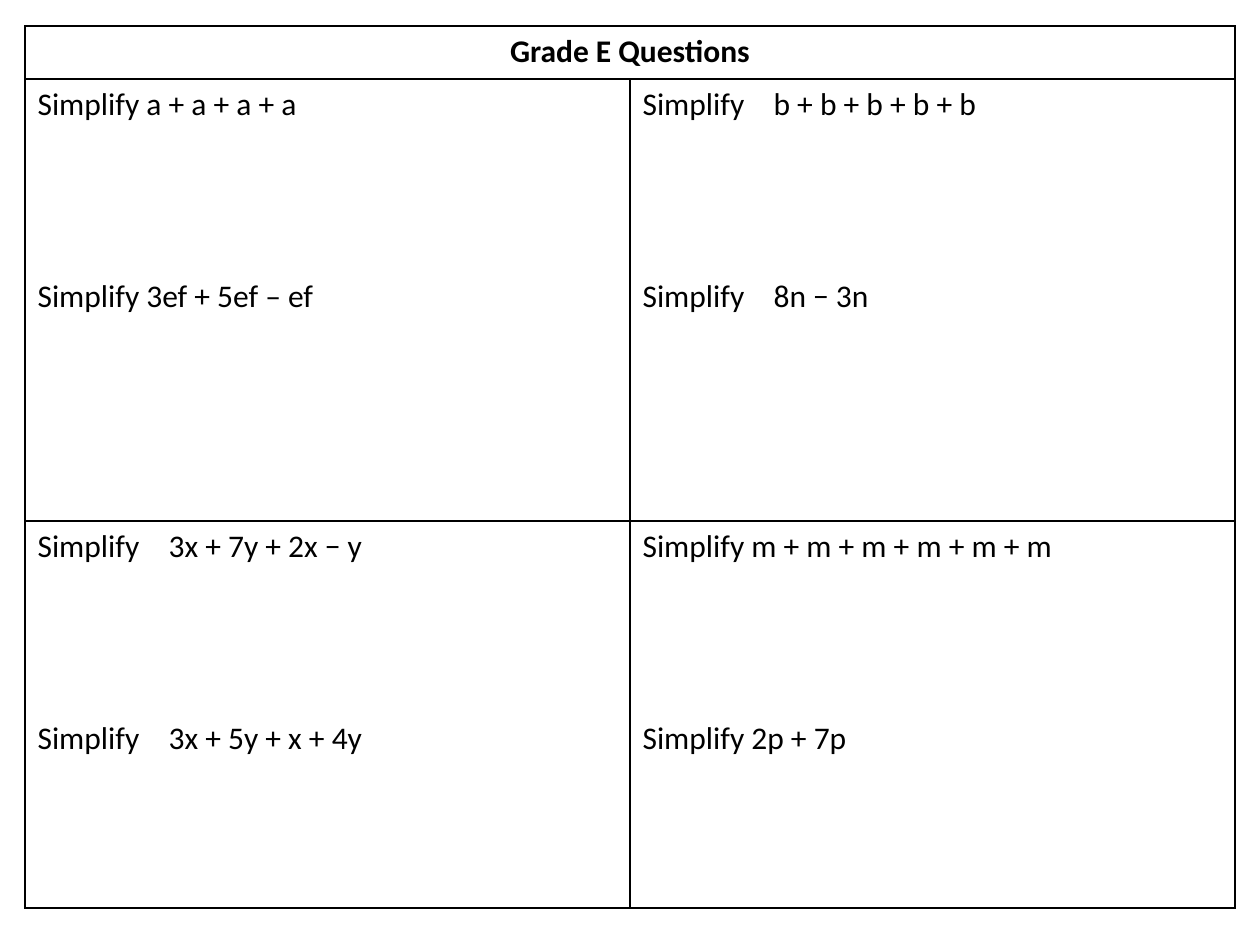
from lxml.etree import SubElement
from pptx import Presentation
from pptx.dml.color import RGBColor
from pptx.enum.text import PP_ALIGN as Align
from pptx.oxml.ns import qn
from pptx.util import Pt

PX = 914400 / 126
BLACK = RGBColor(0, 0, 0)
ROW_HEIGHTS = [53, 442, 387]
COLUMN_WIDTH = 605
TAB_STOP = 131
QUESTION_GAP = Pt(88)

TITLE = "Grade E Questions"
QUESTIONS = [
    [["Simplify a + a + a + a", "Simplify 3ef + 5ef – ef"],
     ["Simplify\tb + b + b + b + b", "Simplify\t8n − 3n"]],
    [["Simplify\t3x + 7y + 2x − y", "Simplify\t3x + 5y + x + 4y"],
     ["Simplify m + m + m + m + m + m", "Simplify 2p + 7p"]],
]


def px(length):
    return int(length * PX)


def style_font(paragraph, bold):
    font = paragraph.font
    font.name = "Calibri"
    font.size = Pt(18)
    font.bold = bold
    font.color.rgb = BLACK


presentation = Presentation()
presentation.slide_width = px(1260)
presentation.slide_height = px(945)
slide = presentation.slides.add_slide(presentation.slide_layouts[6])

# Table grid
table = slide.shapes.add_table(
    3, 2, px(25), px(26), px(2 * COLUMN_WIDTH), px(sum(ROW_HEIGHTS))).table
table.first_row = False
table.horz_banding = False
for column in table.columns:
    column.width = px(COLUMN_WIDTH)
for row, height in zip(table.rows, ROW_HEIGHTS):
    row.height = px(height)

# Black borders and no fill on every cell
for cell in table.iter_cells():
    properties = cell._tc.get_or_add_tcPr()
    for side in ("lnL", "lnR", "lnT", "lnB"):
        line = SubElement(properties, qn(f"a:{side}"), w=str(Pt(1)))
        line_fill = SubElement(line, qn("a:solidFill"))
        SubElement(line_fill, qn("a:srgbClr"), val=str(BLACK))
    cell.fill.background()

# Heading across both columns
heading = table.cell(0, 0)
heading.merge(table.cell(0, 1))
paragraph = heading.text_frame.paragraphs[0]
paragraph.text = TITLE
paragraph.alignment = Align.CENTER
style_font(paragraph, True)

# Two questions in each cell, with working space between them
for row_index, question_row in enumerate(QUESTIONS, start=1):
    for column_index, questions in enumerate(question_row):
        text_frame = table.cell(row_index, column_index).text_frame
        text_frame.text = "\n".join(questions)
        for index, paragraph in enumerate(text_frame.paragraphs):
            paragraph.space_before = QUESTION_GAP * index
            if "\t" in questions[index]:
                tabs = SubElement(paragraph._p.get_or_add_pPr(), qn("a:tabLst"))
                SubElement(tabs, qn("a:tab"), pos=str(px(TAB_STOP)), algn="l")
            style_font(paragraph, False)

presentation.save("out.pptx")
